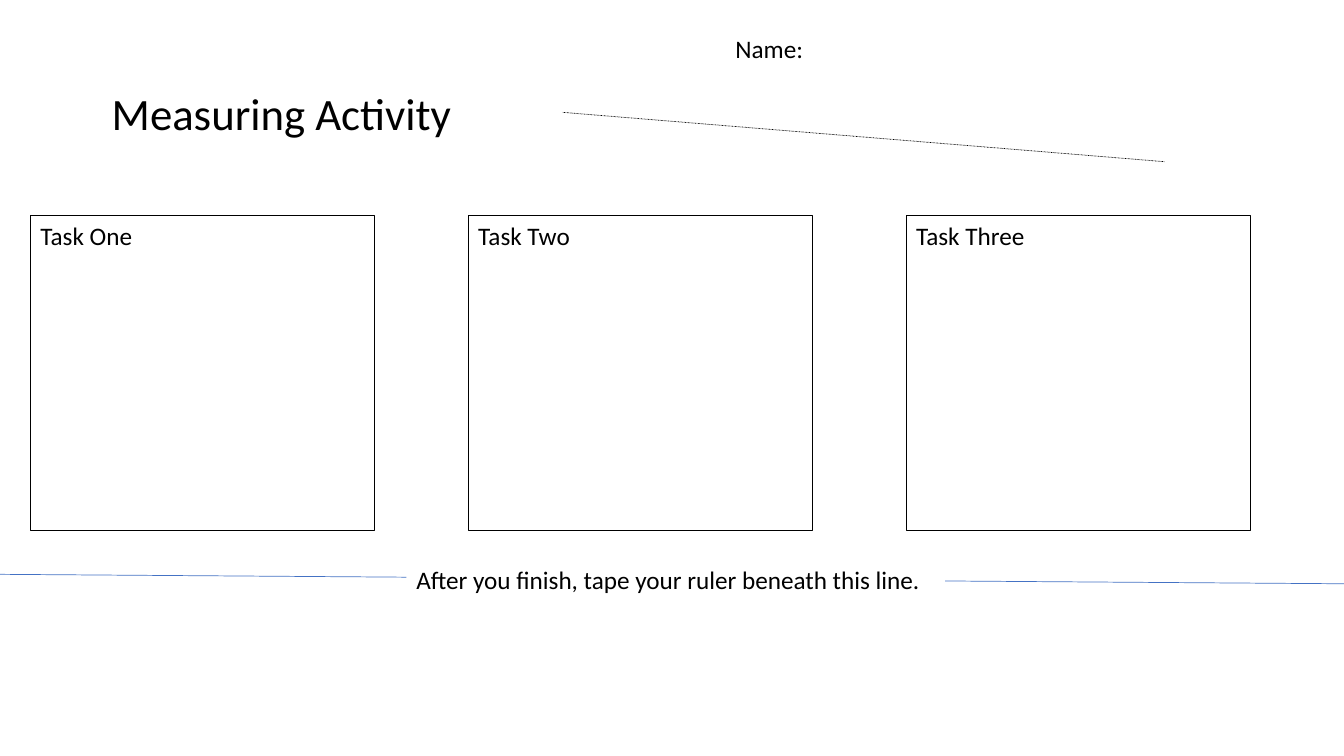
from dataclasses import dataclass

from lxml import etree
from pptx import Presentation
from pptx import util as u
from pptx.dml.color import RGBColor
from pptx.enum import dml, shapes, text
from pptx.oxml.ns import qn

EMU_PER_PX = 9525  # 96 px to the inch


def px(length):
    return u.Emu(length * EMU_PER_PX)


@dataclass(frozen=True)
class Theme:
    font: str = "Calibri"
    ink: RGBColor = RGBColor(0x00, 0x00, 0x00)
    paper: RGBColor = RGBColor(0xFF, 0xFF, 0xFF)
    tape: RGBColor = RGBColor(0x44, 0x72, 0xC4)
    title_size: int = 32
    body_size: int = 18
    hairline: float = 0.5
    border: float = 0.75


def set_text(frame, words, *, font, size, color):
    """Put one left-aligned line of text at the top of a text frame."""
    frame.word_wrap = True
    frame.auto_size = text.MSO_AUTO_SIZE.NONE
    frame.vertical_anchor = text.MSO_ANCHOR.TOP
    paragraph = frame.paragraphs[0]
    paragraph.alignment = text.PP_ALIGN.LEFT
    run = paragraph.add_run()
    run.text = words
    run.font.name = font
    run.font.size = u.Pt(size)
    run.font.color.rgb = color


class Worksheet:
    def __init__(self, slide, theme):
        self.slide = slide
        self.theme = theme

    def label(self, words, left, top, width, height, size):
        label = self.slide.shapes.add_textbox(*map(px, (left, top, width, height)))
        set_text(label.text_frame, words, font=self.theme.font,
                 size=size, color=self.theme.ink)

    def box(self, words, left, top, width, height, fill=None, border=None):
        box = self.slide.shapes.add_shape(
            shapes.MSO_SHAPE.RECTANGLE, *map(px, (left, top, width, height)))
        box.shadow.inherit = False
        if fill is None:
            box.fill.background()
        else:
            box.fill.solid()
            box.fill.fore_color.rgb = fill
        if border is None:
            box.line.fill.background()
        else:
            box.line.color.rgb = border
            box.line.width = u.Pt(self.theme.border)
        set_text(box.text_frame, words, font=self.theme.font,
                 size=self.theme.body_size, color=self.theme.ink)

    def line(self, x1, y1, x2, y2, color, dash=None):
        line = self.slide.shapes.add_connector(
            shapes.MSO_CONNECTOR.STRAIGHT, *map(px, (x1, y1, x2, y2)))
        line.line.color.rgb = color
        line.line.width = u.Pt(self.theme.hairline)
        if dash is not None:
            line.line.dash_style = dash
        etree.SubElement(line._element.spPr, qn("a:effectLst"))


def main():
    theme = Theme()
    deck = Presentation()
    deck.slide_width, deck.slide_height = px(1280), px(720)
    sheet = Worksheet(deck.slides.add_slide(deck.slide_layouts[6]), theme)

    # Name field and the dotted line to measure
    sheet.line(536, 107, 1109, 154, theme.ink, dash=dml.MSO_LINE.ROUND_DOT)
    sheet.label("Name:", 691, 27, 485, 38, theme.body_size)

    # Tape line, interrupted by its instruction
    sheet.line(0, 547, 1280, 556, theme.tape)
    sheet.box("After you finish, tape your ruler beneath this line.",
              387, 533, 513, 38, fill=theme.paper)

    # Task boxes
    first_left, task_step = 29, 417
    for column, task in enumerate(("Task One", "Task Two", "Task Three")):
        sheet.box(task, first_left + column * task_step, 205, 328, 300,
                  border=theme.ink)

    # Title
    sheet.label("Measuring Activity", 97, 77, 485, 61, theme.title_size)

    deck.save("out.pptx")


if __name__ == "__main__":
    main()
